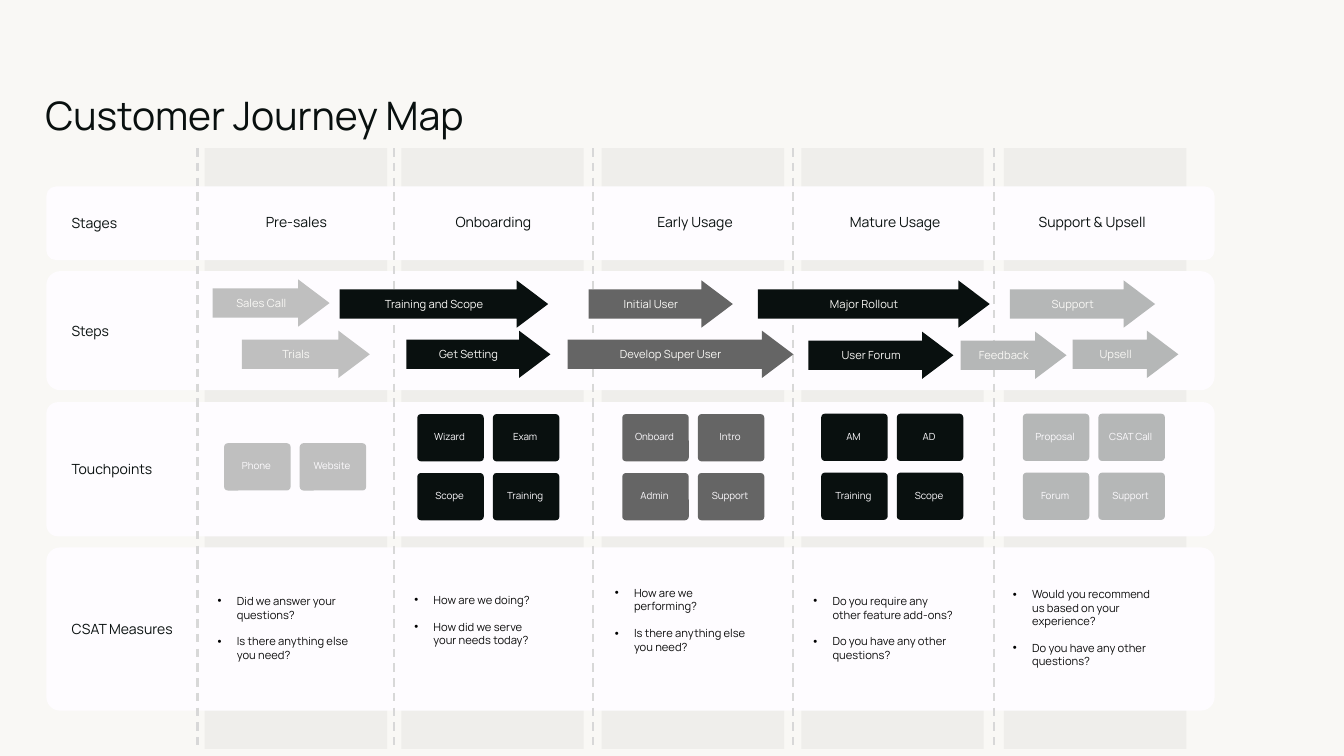
"""Build the customer journey map slide."""
from dataclasses import dataclass

from lxml.etree import SubElement
from pptx import Presentation
from pptx.dml.color import RGBColor
from pptx.enum.dml import MSO_LINE
from pptx.enum.shapes import MSO_CONNECTOR, MSO_SHAPE
from pptx.enum.text import MSO_ANCHOR as Anchor, PP_ALIGN as Align
from pptx.oxml.ns import qn
from pptx.util import Pt

FONT = "Manrope"
INK, PAPER, PANEL = "09100F", "F9F8F5", "FEFCFF"
GREY, SILVER, ASH = "656565", "BFBFBF", "B5B7B7"
TOP, BAND_WIDTH, BAND_HEIGHT = 105.8, 130.3, 429.1
ARROW_HEIGHT = 33.8
CARD_WIDTH, CARD_HEIGHT, CARD_STEP_X, CARD_STEP_Y = 47.5, 33.8, 54, 42.1
BULLET_INDENT = 13.7


@dataclass
class Row:
    label: str
    label_width: float
    top: float
    height: float
    rounding: float


@dataclass
class Arrow:
    text: str
    left: float
    top: float
    width: float


@dataclass
class Stage:
    name: str
    centre: float
    name_width: float
    band_left: float
    divider: float
    color: str
    arrows: list[Arrow]
    cards: list[str]
    cards_left: float
    cards_top: float
    questions: list[str]
    questions_left: float
    questions_width: float
    questions_height: float


ROWS = [
    Row("CSAT Measures", 79.9, 391, 116.6, 0.084),
    Row("Stages", 36, 133.2, 52.6, 0.133),
    Row("Steps", 28.8, 193.7, 85, 0.116),
    Row("Touchpoints", 64.8, 287.3, 95.8, 0.085),
]

STAGES = [
    Stage("Pre-sales", 211.7, 64.8, 146.2, 141.1, SILVER,
          [Arrow("Sales Call", 151.9, 199.6, 83.5), Arrow("Trials", 172.8, 236.2, 91.4)],
          ["Phone", "Website"], 160.1, 316.6,
          ["Did we answer your questions?", "Is there anything else you need?"],
          155.5, 94.3, 54.7),
    Stage("Onboarding", 352.4, 77, 286.6, 281.5, INK,
          [Arrow("Training and Scope", 242.6, 200.3, 149), Arrow("Get Setting", 290.2, 236.2, 103)],
          ["Wizard", "Exam", "Scope", "Training"], 298.1, 295.8,
          ["How are we doing?", "How did we serve your needs today?"],
          295.9, 94.3, 43.2),
    Stage("Early Usage", 496.4, 75.6, 429.8, 423.4, GREY,
          [Arrow("Initial User", 420.5, 200.3, 103), Arrow("Develop Super User", 405.4, 236.2, 161.3)],
          ["Onboard", "Intro", "Admin", "Support"], 444.5, 295.8,
          ["How are we performing?", "Is there anything else you need?"],
          439.2, 94.3, 43.2),
    Stage("Mature Usage", 639.4, 86.4, 572.4, 566.6, INK,
          [Arrow("Major Rollout", 541.4, 200.3, 165.6), Arrow("User Forum", 577.4, 236.9, 103.7)],
          ["AM", "AD", "Training", "Scope"], 586.6, 295.5,
          ["Do you require any other feature add-ons?", "Do you have any other questions?"],
          581, 103, 54.7),
    Stage("Support & Upsell", 780.1, 100.1, 717.1, 709.9, ASH,
          [Arrow("Support", 721.4, 200.3, 103.7), Arrow("Feedback", 686.2, 236.9, 75.6),
           Arrow("Upsell", 766.1, 236.2, 75.6)],
          ["Proposal", "CSAT Call", "Forum", "Support"], 730.6, 295.5,
          ["Would you recommend us based on your experience?", "Do you have any other questions?"],
          723.6, 103.7, 54.7),
]


def color_of(value: str) -> RGBColor:
    """Turn a hex string into a colour."""
    return RGBColor.from_string(value)


def write_text(shape, *lines: str, size: float, color: str = INK, align=Align.LEFT,
               anchor=Anchor.MIDDLE, insets=(0, 0, 0, 0), wrap: bool = True,
               bullets: bool = False, gap: float = 0) -> None:
    """Write one paragraph per line into a shape."""
    frame = shape.text_frame
    frame.word_wrap, frame.vertical_anchor = wrap, anchor
    frame.margin_left, frame.margin_top, frame.margin_right, frame.margin_bottom = map(Pt, insets)
    for index, line in enumerate(lines):
        paragraph = frame.add_paragraph() if index else frame.paragraphs[0]
        paragraph.alignment = align
        paragraph.space_before = Pt(gap if index else 0)
        run = paragraph.add_run()
        run.text = line
        run.font.name, run.font.size = FONT, Pt(size)
        run.font.color.rgb = color_of(color)
        if bullets:
            properties = paragraph._p.get_or_add_pPr()
            properties.set("marL", str(Pt(BULLET_INDENT)))
            properties.set("indent", str(-Pt(BULLET_INDENT)))
            bullet_color = SubElement(properties, qn("a:buClr"))
            SubElement(bullet_color, qn("a:srgbClr"), val="000000")
            SubElement(properties, qn("a:buFont"), typeface="Arial")
            SubElement(properties, qn("a:buChar"), char="•")


def add_block(slide, kind, left: float, top: float, width: float, height: float,
              fill: str, adjustments=(), opacity: int = 100):
    """Add a filled preset shape without outline or shadow."""
    shape = slide.shapes.add_shape(kind, Pt(left), Pt(top), Pt(width), Pt(height))
    shape.shadow.inherit = False
    shape.line.fill.background()
    shape.fill.solid()
    shape.fill.fore_color.rgb = color_of(fill)
    for index, value in enumerate(adjustments):
        shape.adjustments[index] = value
    if opacity < 100:
        tint = shape._element.spPr.find(".//" + qn("a:srgbClr"))
        SubElement(tint, qn("a:alpha"), val=str(opacity * 1000))
    return shape


def add_label(slide, left: float, top: float, width: float, height: float, *lines: str, **style) -> None:
    """Add a text box."""
    box = slide.shapes.add_textbox(Pt(left), Pt(top), Pt(width), Pt(height))
    write_text(box, *lines, **style)


def add_row(slide, row: Row) -> None:
    """Draw a row panel with its label."""
    add_block(slide, MSO_SHAPE.ROUNDED_RECTANGLE, 33.1, row.top, 834.5, row.height, PANEL, [row.rounding])
    add_label(slide, 51.1, row.top + row.height / 2 - 6.1, row.label_width, 12.2,
              row.label, size=10, wrap=False)


def add_divider(slide, x: float) -> None:
    """Draw a dashed vertical divider."""
    line = slide.shapes.add_connector(MSO_CONNECTOR.STRAIGHT, Pt(x), Pt(TOP), Pt(x), Pt(535.7))
    line.line.color.rgb = color_of("D8D8D8")
    line.line.width, line.line.dash_style = Pt(1.5), MSO_LINE.DASH
    SubElement(line._element.spPr, qn("a:effectLst"))


def add_stage(slide, stage: Stage) -> None:
    """Draw the heading, arrows, cards and questions of a stage."""
    add_label(slide, stage.centre - stage.name_width / 2, 149, stage.name_width, 19.4, stage.name,
              size=10, align=Align.CENTER, anchor=Anchor.TOP, insets=(7.2, 3.6, 7.2, 3.6), wrap=False)
    for arrow in stage.arrows:
        shape = add_block(slide, MSO_SHAPE.RIGHT_ARROW, arrow.left, arrow.top, arrow.width,
                          ARROW_HEIGHT, stage.color, [0.619, 0.664])
        write_text(shape, arrow.text, size=8, color=PAPER, align=Align.CENTER, insets=(7.2, 3.6, 7.2, 3.6))
    for index, name in enumerate(stage.cards):
        line, column = divmod(index, 2)
        card = add_block(slide, MSO_SHAPE.ROUNDED_RECTANGLE, stage.cards_left + column * CARD_STEP_X,
                         stage.cards_top + line * CARD_STEP_Y, CARD_WIDTH, CARD_HEIGHT, stage.color, [0.079])
        write_text(card, name, size=7, color=PANEL, align=Align.CENTER, insets=(0, 0, 1.4, 1.4))
    add_label(slide, stage.questions_left, 421.2, stage.questions_width, stage.questions_height,
              *stage.questions, size=8, color="0C0C0C", bullets=True, gap=9.6)


def main() -> None:
    """Build and save the presentation."""
    presentation = Presentation()
    presentation.slide_width, presentation.slide_height = Pt(960), Pt(540)
    slide = presentation.slides.add_slide(presentation.slide_layouts[6])
    slide.background.fill.solid()
    slide.background.fill.fore_color.rgb = color_of(PAPER)
    for stage in STAGES:
        add_block(slide, MSO_SHAPE.RECTANGLE, stage.band_left, TOP, BAND_WIDTH, BAND_HEIGHT, "7F7F7F", opacity=8)
    for row in ROWS:
        add_row(slide, row)
    for stage in STAGES:
        add_divider(slide, stage.divider)
    for stage in STAGES:
        add_stage(slide, stage)
    title = add_block(slide, MSO_SHAPE.RECTANGLE, 32.4, 65.5, 664.6, 36.7, PAPER)
    write_text(title, "Customer Journey Map", size=28, anchor=Anchor.TOP)
    presentation.save("out.pptx")


if __name__ == "__main__":
    main()
